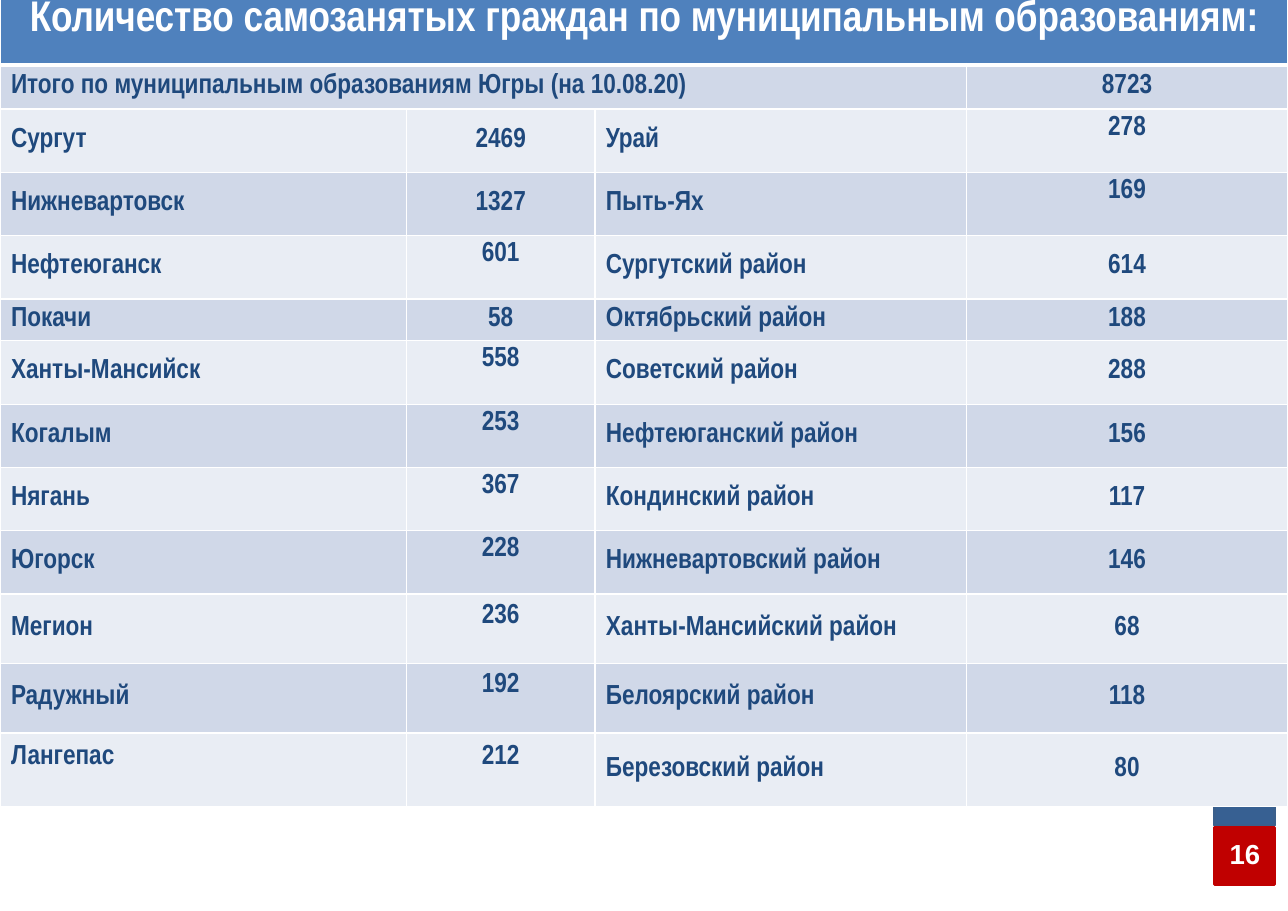
from typing import NamedTuple

from lxml.etree import SubElement
from pptx import Presentation
from pptx.dml.color import RGBColor
from pptx.enum.shapes import MSO_SHAPE as Shape
from pptx.enum.text import MSO_ANCHOR as Anchor, PP_ALIGN as Align
from pptx.oxml.ns import qn
from pptx.util import Inches, Pt

WHITE = RGBColor(0xFF, 0xFF, 0xFF)
NAVY = RGBColor(0x1F, 0x49, 0x7D)
HEADER_BLUE = RGBColor(0x4F, 0x81, 0xBD)
BAND_DARK = RGBColor(0xD0, 0xD8, 0xE8)
BAND_LIGHT = RGBColor(0xE9, 0xED, 0xF4)
STRIP_BLUE = RGBColor(0x37, 0x60, 0x92)
STRIP_LINE = RGBColor(0x3A, 0x5F, 0x8C)
RED = RGBColor(0xC0, 0x00, 0x00)

COLUMN_WIDTHS = [3.69, 1.71, 3.37, 2.92]
TALL_ROW = Inches(2.3) // 4
ROW_HEIGHTS = [Inches(0.63), Inches(0.4), *[TALL_ROW] * 3, Inches(0.38),
               *[TALL_ROW] * 4, Inches(0.63), Inches(0.63), Inches(0.67)]


class Place(NamedTuple):
    """A municipality; a raised text sits above the middle of its cell."""
    name: str
    count: int
    name_raised: bool = False
    count_raised: bool = False


class Plate(NamedTuple):
    left: float
    top: float
    width: float
    height: float
    fill: RGBColor
    line: RGBColor


CITIES = [
    Place("Сургут", 2469),
    Place("Нижневартовск", 1327),
    Place("Нефтеюганск", 601, count_raised=True),
    Place("Покачи", 58),
    Place("Ханты-Мансийск", 558, count_raised=True),
    Place("Когалым", 253, count_raised=True),
    Place("Нягань", 367, count_raised=True),
    Place("Югорск", 228, count_raised=True),
    Place("Мегион", 236, count_raised=True),
    Place("Радужный", 192, count_raised=True),
    Place("Лангепас", 212, name_raised=True, count_raised=True),
]
DISTRICTS = [
    Place("Урай", 278, count_raised=True),
    Place("Пыть-Ях", 169, count_raised=True),
    Place("Сургутский район", 614),
    Place("Октябрьский район", 188),
    Place("Советский район", 288),
    Place("Нефтеюганский район", 156),
    Place("Кондинский район", 117),
    Place("Нижневартовский район", 146),
    Place("Ханты-Мансийский район", 68),
    Place("Белоярский район", 118),
    Place("Березовский район", 80),
]
PLATES = [
    Plate(11.02, 5.97, 0.55, 1.52, STRIP_BLUE, STRIP_LINE),
    Plate(11.02, 7.51, 0.55, 0.52, RED, RED),
]


def write(frame, text: str, *, size: float = 18, font: str = "Arial Narrow",
          color: RGBColor = NAVY, align: Align = Align.LEFT,
          spacing: float = 0.83) -> None:
    para = frame.paragraphs[0]
    para.alignment = align
    para.line_spacing = spacing
    span = para.add_run()
    span.text = text
    span.font.size = Pt(size)
    span.font.name = font
    span.font.bold = True
    span.font.color.rgb = color


def style_cell(cell, fill: RGBColor, bottom_width: float = 1) -> None:
    """Give the cell white borders and a solid fill."""
    properties = cell._tc.get_or_add_tcPr()
    for side in ("L", "R", "T", "B"):
        width = bottom_width if side == "B" else 1
        line = SubElement(properties, qn(f"a:ln{side}"), w=str(Pt(width)))
        solid = SubElement(line, qn("a:solidFill"))
        SubElement(solid, qn("a:srgbClr"), val=str(WHITE))
    cell.fill.solid()
    cell.fill.fore_color.rgb = fill


def fill_cell(cell, text: str, *, raised: bool = False,
              align: Align = Align.LEFT) -> None:
    cell.vertical_anchor = Anchor.MIDDLE
    if raised:
        cell.margin_bottom = Inches(0.27)
    write(cell.text_frame, text, align=align)


def add_plate(page, plate: Plate) -> None:
    box = page.shapes.add_shape(Shape.RECTANGLE, *map(Inches, plate[:4]))
    box.shadow.inherit = False
    box.fill.solid()
    box.fill.fore_color.rgb = plate.fill
    box.line.color.rgb = plate.line
    box.line.width = Pt(2)


def add_page_number(page, number: int) -> None:
    box = page.shapes.add_textbox(Inches(11), Inches(7.53), Inches(0.6), Inches(0.44))
    frame = box.text_frame
    frame.word_wrap = True
    frame.margin_left = frame.margin_right = 0
    frame.vertical_anchor = Anchor.MIDDLE
    write(frame, str(number), font="Arial", color=WHITE, align=Align.CENTER, spacing=1.0)


def add_places_table(page) -> None:
    table = page.shapes.add_table(
        len(ROW_HEIGHTS), len(COLUMN_WIDTHS), 0, Inches(-0.04),
        Inches(sum(COLUMN_WIDTHS)), sum(ROW_HEIGHTS)).table
    for column, width in zip(table.columns, COLUMN_WIDTHS):
        column.width = Inches(width)
    for index, (row, height) in enumerate(zip(table.rows, ROW_HEIGHTS)):
        row.height = height
        band = BAND_DARK if index % 2 else BAND_LIGHT
        for cell in row.cells:
            style_cell(cell, band if index else HEADER_BLUE, 1 if index else 3)

    title = table.cell(0, 0)
    title.merge(table.cell(0, 3))
    write(title.text_frame, "Количество самозанятых граждан по муниципальным образованиям:",
          size=28, color=WHITE, align=Align.CENTER, spacing=0.93)
    total = table.cell(1, 0)
    total.merge(table.cell(1, 2))
    fill_cell(total, "Итого по муниципальным образованиям Югры (на 10.08.20)")
    fill_cell(table.cell(1, 3), "8723", align=Align.CENTER)

    for column, places in ((0, CITIES), (2, DISTRICTS)):
        for row, place in enumerate(places, start=2):
            fill_cell(table.cell(row, column), place.name, raised=place.name_raised)
            fill_cell(table.cell(row, column + 1), str(place.count),
                      raised=place.count_raised, align=Align.CENTER)


def main() -> None:
    deck = Presentation()
    deck.slide_width, deck.slide_height = Inches(11.69), Inches(8.27)
    page = deck.slides.add_slide(deck.slide_layouts[6])
    for plate in PLATES:
        add_plate(page, plate)
    add_page_number(page, 16)
    add_places_table(page)
    deck.save("out.pptx")


if __name__ == "__main__":
    main()
